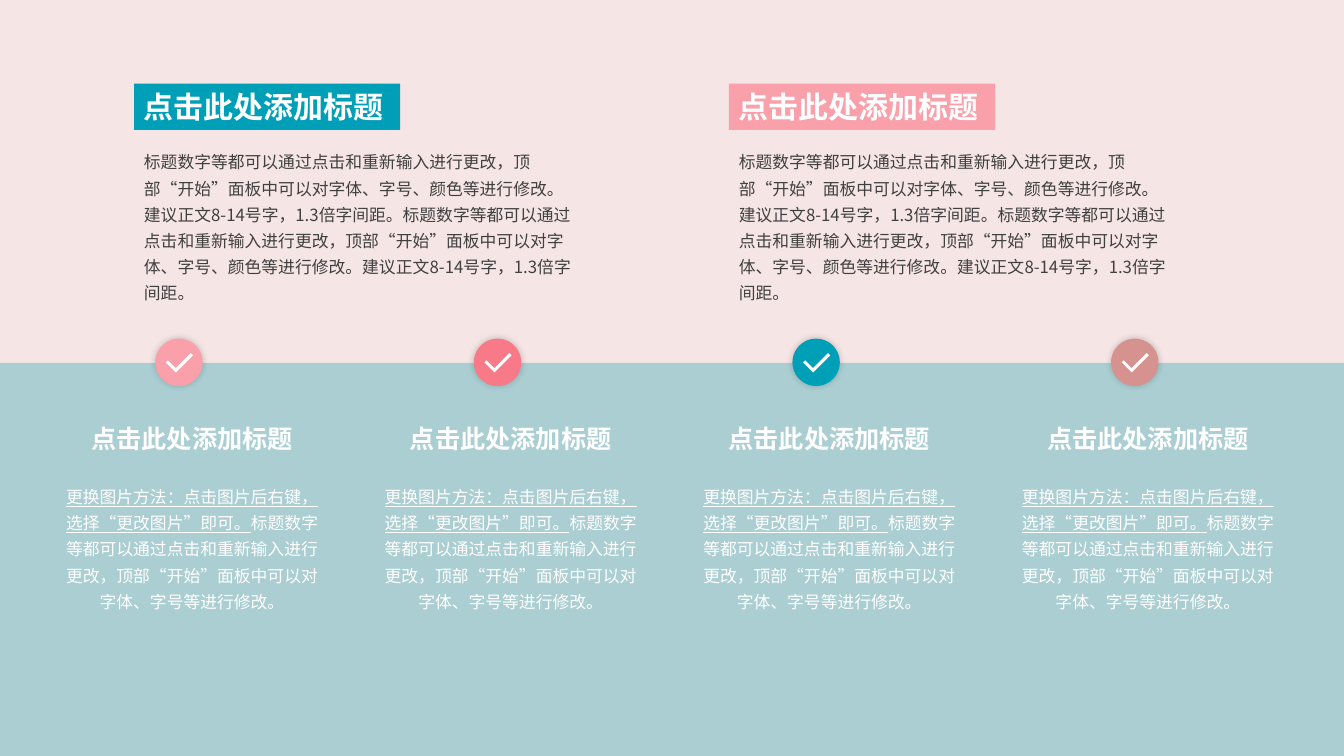
from dataclasses import dataclass

from lxml import etree
from pptx import Presentation
from pptx import util as u
from pptx.dml.color import RGBColor
from pptx.enum import shapes, text
from pptx.oxml import ns

HEADING = "点击此处添加标题"
BODY = (
    "标题数字等都可以通过点击和重新输入进行更改，顶部“开始”面板中可以对字体、字号、"
    "颜色等进行修改。建议正文8-14号字，1.3倍字间距。"
) * 2
PICTURE_HINT = "更换图片方法：点击图片后右键，选择“更改图片”即可。"
COLUMN_BODY = "标题数字等都可以通过点击和重新输入进行更改，顶部“开始”面板中可以对字体、字号等进行修改。"
BODY_FONT = "Noto Sans CJK SC"
TEAL, PINK, WHITE, GREY = "009FB8", "FAA0AA", "FFFFFF", "404040"


@dataclass
class Box:
    left: float
    top: float
    width: float
    height: float

    def lengths(self) -> list[u.Length]:
        return [u.Inches(n) for n in (self.left, self.top, self.width, self.height)]


@dataclass
class Style:
    size: float
    font: str
    color: str
    bold: bool = False
    underline: bool = False


@dataclass
class Banner:
    left: float
    color: str


BANNERS = [Banner(1.33, TEAL), Banner(7.23, PINK)]
COLUMN_COLORS = [PINK, "F87987", TEAL, "D5928E"]
COLUMN_LEFT, COLUMN_STEP, COLUMN_WIDTH = 0.51, 3.16, 2.79

BANNER_STYLE = Style(21.4, "Arial", WHITE, bold=True)
BODY_STYLE = Style(12, BODY_FONT, GREY)
HEADING_STYLE = Style(18, "TeX Gyre Adventor", WHITE, bold=True)
HINT_STYLE = Style(12, BODY_FONT, WHITE, underline=True)
COLUMN_STYLE = Style(12, BODY_FONT, WHITE)


def rgb(color: str) -> RGBColor:
    return RGBColor.from_string(color)


def format_span(span, style: Style) -> None:
    font = span.font
    font.size = u.Pt(style.size)
    font.name = style.font
    font.bold = style.bold
    font.underline = style.underline
    font.color.rgb = rgb(style.color)
    latin = span._r.rPr.find(ns.qn("a:latin"))
    east_asian = etree.Element(ns.qn("a:ea"), typeface=BODY_FONT)
    latin.addnext(east_asian)


def add_shape(parent, kind: shapes.MSO_SHAPE, box: Box, color: str):
    shape = parent.shapes.add_shape(kind, *box.lengths())
    shape.shadow.inherit = False
    shape.fill.solid()
    shape.fill.fore_color.rgb = rgb(color)
    shape.line.fill.background()
    return shape


def add_text(page, box: Box, spans: list[tuple[str, Style]],
             align: text.PP_ALIGN) -> None:
    frame = page.shapes.add_textbox(*box.lengths()).text_frame
    frame.word_wrap = True
    para = frame.paragraphs[0]
    para.alignment = align
    para.line_spacing = 1.3
    for words, style in spans:
        span = para.add_run()
        span.text = words
        format_span(span, style)


def add_banner(page, banner: Banner) -> None:
    bar = add_shape(page, shapes.MSO_SHAPE.RECTANGLE,
                    Box(banner.left, 0.83, 2.64, 0.46), banner.color)
    frame = bar.text_frame
    frame.text = HEADING
    frame.word_wrap = True
    frame.vertical_anchor = text.MSO_ANCHOR.MIDDLE
    para = frame.paragraphs[0]
    para.alignment = text.PP_ALIGN.LEFT
    format_span(para.runs[0], BANNER_STYLE)
    add_text(page, Box(banner.left, 1.4, 4.5, 1.41), [(BODY, BODY_STYLE)],
             text.PP_ALIGN.LEFT)


def add_soft_shadow(shape) -> None:
    effects = shape._element.spPr.find(ns.qn("a:effectLst"))
    shadow = etree.SubElement(effects, ns.qn("a:outerShdw"),
                              blurRad=str(u.Pt(5)), dist="0", dir="0")
    color = etree.SubElement(shadow, ns.qn("a:srgbClr"), val="000000")
    etree.SubElement(color, ns.qn("a:alpha"), val="20000")


def add_check(page, left: float, color: str) -> None:
    group = page.shapes.add_group_shape()
    disc = add_shape(group, shapes.MSO_SHAPE.OVAL, Box(left, 3.36, 0.47, 0.47), color)
    add_soft_shadow(disc)
    tick = add_shape(group, shapes.MSO_SHAPE.CORNER,
                     Box(left + 0.12, 3.49, 0.24, 0.14), WHITE)
    tick.adjustments[0] = 0.218
    tick.adjustments[1] = 0.206
    tick.rotation = 315


def add_column(page, left: float, color: str) -> None:
    center = text.PP_ALIGN.CENTER
    add_check(page, left + 1.03, color)
    add_text(page, Box(left, 4.72, COLUMN_WIDTH, 1.53),
             [(PICTURE_HINT, HINT_STYLE), (COLUMN_BODY, COLUMN_STYLE)], center)
    add_text(page, Box(left, 4.06, COLUMN_WIDTH, 0.54),
             [(HEADING, HEADING_STYLE)], center)


def main() -> None:
    deck = Presentation()
    deck.slide_width, deck.slide_height = u.Inches(13.33), u.Inches(7.5)
    page = deck.slides.add_slide(deck.slide_layouts[6])
    page.background.fill.solid()
    page.background.fill.fore_color.rgb = rgb("F5E5E4")
    add_shape(page, shapes.MSO_SHAPE.RECTANGLE, Box(0, 3.6, 13.33, 3.9), "AACED2")
    for banner in BANNERS:
        add_banner(page, banner)
    for index, color in enumerate(COLUMN_COLORS):
        add_column(page, COLUMN_LEFT + index * COLUMN_STEP, color)
    deck.save("out.pptx")


if __name__ == "__main__":
    main()
